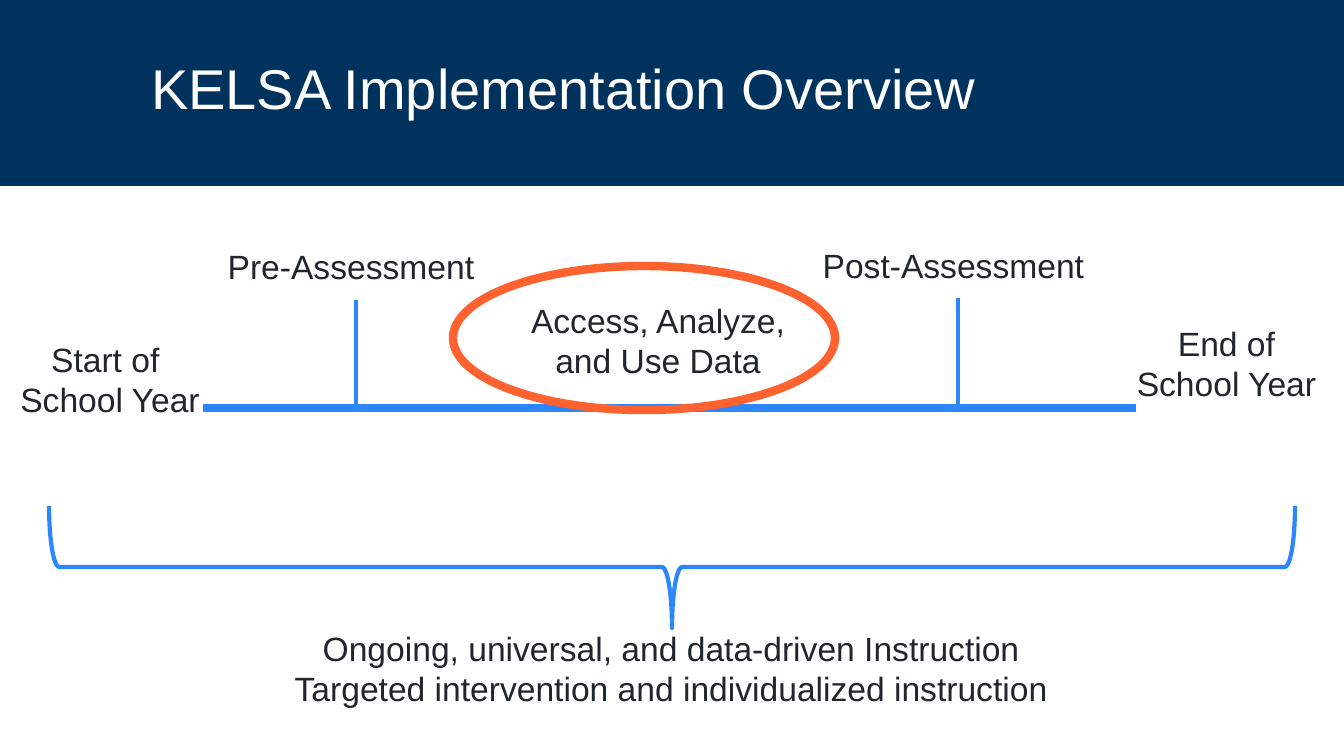
from pptx import Presentation
from pptx.dml.color import RGBColor
from pptx.enum.shapes import MSO_CONNECTOR, MSO_SHAPE
from pptx.enum.text import MSO_ANCHOR, PP_ALIGN
from pptx.oxml.ns import qn
from pptx.util import Pt
from lxml import etree

PX = 914400 / 100.8
W, H = 1344, 756
FONT = "Arial"
NAVY = RGBColor(0x00, 0x32, 0x5E)
BLUE = RGBColor(0x2C, 0x86, 0xFE)
ORANGE = RGBColor(0xFF, 0x61, 0x2F)
INK = RGBColor(0x20, 0x25, 0x2E)
WHITE = RGBColor(0xFF, 0xFF, 0xFF)
STRAIGHT = MSO_CONNECTOR.STRAIGHT
RECT, OVAL, BRACE = MSO_SHAPE.RECTANGLE, MSO_SHAPE.OVAL, MSO_SHAPE.RIGHT_BRACE
TOP = MSO_ANCHOR.TOP
LEFT, CENTER = PP_ALIGN.LEFT, PP_ALIGN.CENTER


def emu(*lengths):
    return [round(n * PX) for n in lengths]


def add_run(p, text, size, color):
    r = p.add_run()
    r.text = text
    r.font.name = FONT
    r.font.size = Pt(size)
    r.font.color.rgb = color


def add_label(s, x, y, w, h, lines):
    tf = s.shapes.add_textbox(*emu(x, y, w, h)).text_frame
    tf.word_wrap = True
    for i, line in enumerate(lines):
        p = tf.add_paragraph() if i else tf.paragraphs[0]
        p.alignment = CENTER
        add_run(p, line, 24, INK)


def add_line(s, x1, y1, x2, y2, width):
    c = s.shapes.add_connector(STRAIGHT, *emu(x1, y1, x2, y2))
    c.line.color.rgb = BLUE
    c.line.width = Pt(width)
    etree.SubElement(c._element.spPr, qn("a:effectLst"))


def add_outline(s, kind, x, y, w, h, color, width):
    sp = s.shapes.add_shape(kind, *emu(x, y, w, h))
    sp.shadow.inherit = False
    sp.fill.background()
    sp.line.color.rgb = color
    sp.line.width = Pt(width)
    return sp


def add_header(s, x, y, w, h):
    band = s.shapes.add_shape(RECT, *emu(x, y, w, h))
    band.shadow.inherit = False
    band.fill.solid()
    band.fill.fore_color.rgb = NAVY
    band.line.fill.background()
    title = s.shapes.title
    title._element.addprevious(band._element)
    title.left, title.top, title.width, title.height = emu(x + 141, y + 56, w - 226, 109)
    tf = title.text_frame
    tf.word_wrap = True
    tf.vertical_anchor = TOP
    p = tf.paragraphs[0]
    p.alignment = LEFT
    p.line_spacing = 0.9
    add_run(p, "KELSA Implementation Overview", 40, WHITE)


def add_timeline(s, x, y, w, h):
    axis = y + h
    add_line(s, x, axis, x + w, axis, 6)
    add_label(s, x - 28, y, 361, 50, ["Pre-Assessment "])
    add_label(s, x + 576, y - 1, 358, 50, ["Post-Assessment "])
    add_label(s, x - 213, y + 93, 240, 92, ["Start of ", "School Year"])
    add_label(s, x + 917, y + 77, 213, 92, ["End of School Year"])
    add_line(s, x + 153, y + 59, x + 153, axis, 3)
    add_line(s, x + 755, y + 57, x + 755, axis - 2, 3)
    add_label(s, x + 296, y + 54, 318, 92, ["Access, Analyze, and Use Data"])
    add_outline(s, OVAL, x + 250, y + 25, 382, 144, ORANGE, 6)


def add_instruction(s, x, y, w, h):
    depth = 122
    brace = add_outline(s, BRACE, x + (w - depth) / 2, y + (depth - w) / 2, depth, w, BLUE, 3)
    brace.rotation = 90
    add_label(s, x - 25, y + h - 92, w + 48, 92,
              ["Ongoing, universal, and data-driven Instruction",
               "Targeted intervention and individualized instruction"])


def main():
    prs = Presentation()
    prs.slide_width, prs.slide_height = emu(W, H)
    s = prs.slides.add_slide(prs.slide_layouts[5])
    add_header(s, 0, 0, W, 186)
    add_timeline(s, 203, 241, 933, 167)
    add_instruction(s, 49, 506, 1246, 209)
    prs.save("out.pptx")


if __name__ == "__main__":
    main()
